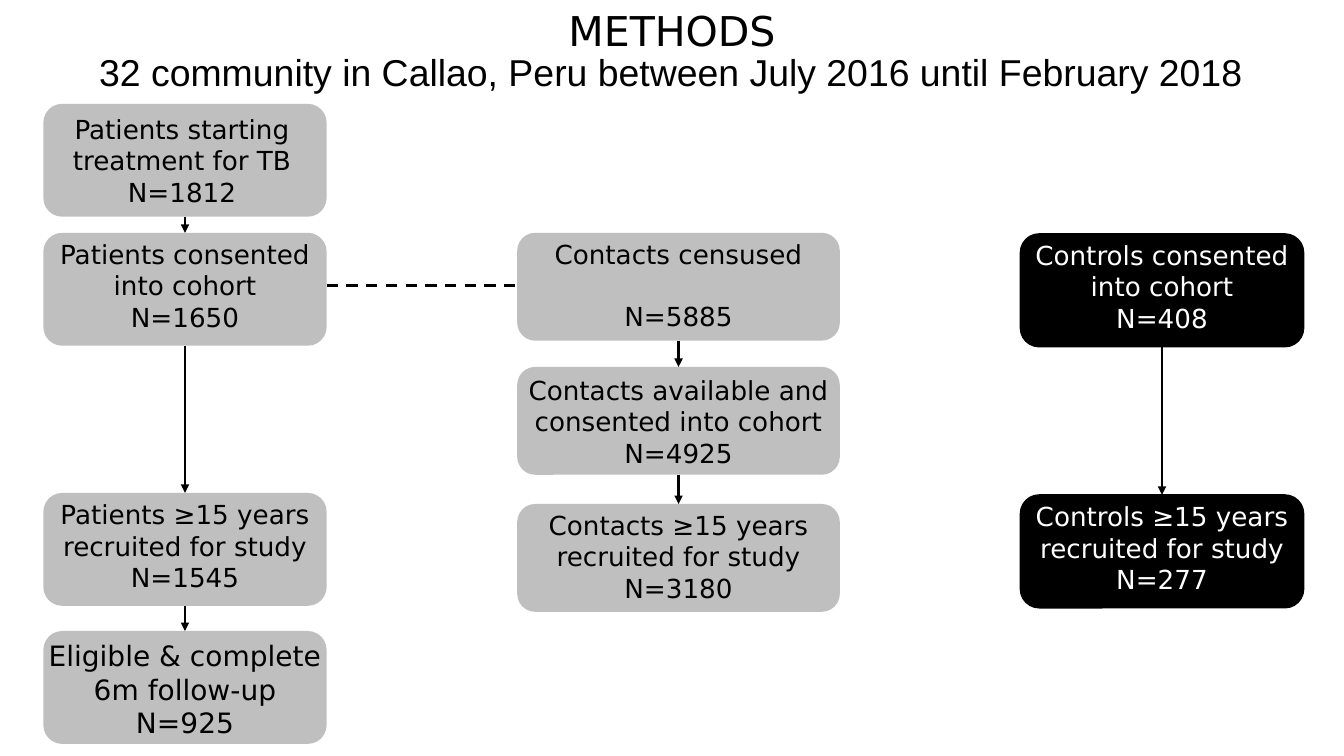
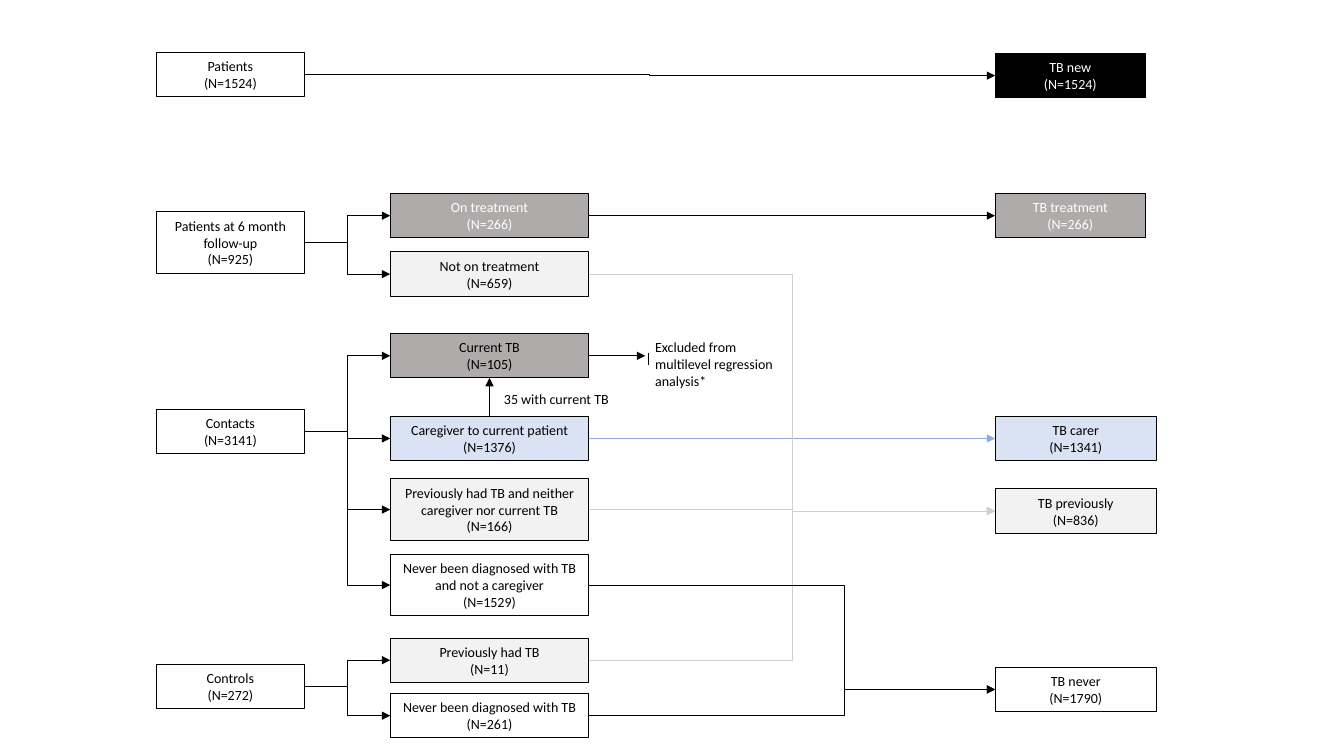
import pptx
import pptx.dml.color
import pptx.enum.dml
import pptx.enum.shapes
import pptx.enum.text
import pptx.oxml.ns
import pptx.util
from lxml import etree

Inches, Pt = pptx.util.Inches, pptx.util.Pt
SHAPE = pptx.enum.shapes.MSO_SHAPE
CONNECTOR = pptx.enum.shapes.MSO_CONNECTOR
ANCHOR = pptx.enum.text.MSO_ANCHOR
ALIGN = pptx.enum.text.PP_ALIGN
qn = pptx.oxml.ns.qn

BLACK, WHITE = "000000", "FFFFFF"
SILVER, GREY, PALE, BLUE = "BFBFBF", "AFABAB", "F2F2F2", "DAE3F3"
PALE_LINE, BLUE_LINE = "D0CECE", "8FAADC"
TOP, LEFT, BOTTOM, RIGHT = range(4)

HEADING = {"name": "DejaVu Sans", "size": Pt(29.3)}
SUBHEADING = {"name": "Arial", "size": Pt(26.7)}
COHORT = {"name": "DejaVu Sans", "size": Pt(18.7)}
COHORT_LARGE = {"name": "DejaVu Sans", "size": Pt(20)}
SMALL = {"name": "Calibri", "size": Pt(10)}
NO_MARGIN = {"margin_left": 0, "margin_right": 0, "margin_top": 0, "margin_bottom": 0}


def rgb(color):
    """Turn a hex string into a colour."""
    return pptx.dml.color.RGBColor.from_string(color)


def apply(target, values):
    """Set attributes from a dict of format values."""
    for name, value in values.items():
        setattr(target, name, value)


def write(sp, text, font, color=BLACK, align=ALIGN.CENTER, gap=0, **frame):
    """Fill a shape with one paragraph per line of text."""
    tf = sp.text_frame
    apply(tf, {"word_wrap": True, "auto_size": pptx.enum.text.MSO_AUTO_SIZE.NONE,
               "vertical_anchor": ANCHOR.TOP, **frame})
    for i, line in enumerate(text.split("\n")):
        p = tf.add_paragraph() if i else tf.paragraphs[0]
        apply(p, {"alignment": align, "space_before": Pt(gap if i else 0)})
        p.text = line
        for r in p.runs:
            apply(r.font, font)
            r.font.color.rgb = rgb(color)


def place(sp, left, top, width, height):
    """Move and size a shape in inches."""
    apply(sp, {"left": Inches(left), "top": Inches(top),
               "width": Inches(width), "height": Inches(height)})


def block(s, kind, box, fill=None, line=None, weight=0.75):
    """Add a preset shape with plain fill and outline."""
    sp = s.shapes.add_shape(kind, *map(Inches, box))
    sp.shadow.inherit = False
    if fill:
        sp.fill.solid()
        sp.fill.fore_color.rgb = rgb(fill)
    else:
        sp.fill.background()
    if line:
        sp.line.color.rgb = rgb(line)
        sp.line.width = Pt(weight)
    else:
        sp.line.fill.background()
    return sp


def connector(s, ends=(0, 0, 0, 0), kind=CONNECTOR.STRAIGHT, color=BLACK,
              weight=0.5, head=True):
    """Add a line without shadow, with an optional arrowhead."""
    c = s.shapes.add_connector(kind, *map(Inches, ends))
    c.line.color.rgb = rgb(color)
    c.line.width = Pt(weight)
    if head:
        etree.SubElement(c.line._get_or_add_ln(), qn("a:tailEnd"), type="triangle")
    etree.SubElement(c._element.spPr, qn("a:effectLst"))
    return c


def join(s, start, end, sites=(RIGHT, LEFT), bend=None, **style):
    """Connect two shapes, bending at a share of the way if asked."""
    kind = CONNECTOR.ELBOW if bend else CONNECTOR.STRAIGHT
    c = connector(s, kind=kind, **style)
    c.begin_connect(start, sites[0])
    c.end_connect(end, sites[1])
    if bend:
        av = c._element.spPr.find(qn("a:prstGeom")).find(qn("a:avLst"))
        etree.SubElement(av, qn("a:gd"), name="adj1", fmla=f"val {round(bend * 100000)}")
    return c


def note(s, box, text):
    """Add a small left-aligned label."""
    tb = s.shapes.add_textbox(*map(Inches, box))
    write(tb, text, SMALL, align=ALIGN.LEFT)


def cohort_column(s, left, top, width, height, rows, fill=SILVER, line=None, ink=BLACK):
    """Stack rounded boxes joined by arrows; each row has an offset, text and format."""
    previous = None
    for offset, text, values in rows:
        sp = block(s, SHAPE.ROUNDED_RECTANGLE, (left, top + offset, width, height),
                   fill, line, 1)
        write(sp, text, color=ink, **{"font": COHORT, **NO_MARGIN, **values})
        if previous:
            join(s, previous, sp, (BOTTOM, TOP), weight=2)
        previous = sp


def category_column(s, left, top, width, rows):
    """Stack small boxes and return them by key."""
    boxes = {}
    for key, offset, height, fill, ink, text in rows:
        sp = block(s, SHAPE.RECTANGLE, (left, top + offset, width, height), fill, BLACK)
        write(sp, text, SMALL, ink, vertical_anchor=ANCHOR.MIDDLE)
        boxes[key] = sp
    return boxes


def methods_slide(prs):
    """Build the recruitment flow of patients, contacts and controls."""
    s = prs.slides.add_slide(prs.slide_layouts[0])
    title, subtitle = s.placeholders
    place(title, 0, 0, 13.33, 0.59)
    write(title, "METHODS", HEADING)
    place(subtitle, 0, 0.44, 13.33, 0.55)
    write(subtitle, "32 community in Callao, Peru between July 2016 until February 2018",
          SUBHEADING)
    cohort_column(s, 0.43, 1.03, 2.81, 1.12, [
        (0, "Patients starting treatment for TB\nN=1812",
         {"margin_top": Inches(0.04), "margin_right": Inches(0.06)}),
        (1.28, "Patients consented into cohort\nN=1650", {}),
        (3.86, "Patients ≥15 years recruited for study\nN=1545", {}),
        (5.23, "Eligible & complete\v6m follow-up\nN=925",
         {"font": COHORT_LARGE, "word_wrap": False, "margin_top": Inches(0.02)}),
    ])
    cohort_column(s, 5.13, 2.31, 3.2, 1.07, [
        (0, "Contacts censused\nN=5885", {"gap": 21.8}),
        (1.33, "Contacts available and consented into cohort\nN=4925",
         {"margin_top": Inches(0.02)}),
        (2.69, "Contacts ≥15 years recruited for study\nN=3180", {}),
    ])
    cohort_column(s, 10.12, 2.32, 2.81, 1.12, [
        (0, "Controls consented into cohort\nN=408", {}),
        (2.59, "Controls ≥15 years recruited for study\nN=277", {}),
    ], BLACK, BLACK, WHITE)
    link = connector(s, (3.24, 2.83, 5.18, 2.83), weight=2, head=False)
    link.line.dash_style = pptx.enum.dml.MSO_LINE.DASH


def categories_slide(prs):
    """Build the flow from participants to TB categories."""
    s = prs.slides.add_slide(prs.slide_layouts[6])
    sources = category_column(s, 1.55, 0.52, 1.47, [
        ("patients", 0, 0.44, None, BLACK, "Patients\n(N=1524)"),
        ("followup", 1.58, 0.61, None, BLACK, "Patients at 6 month follow-up\n(N=925)"),
        ("contacts", 3.54, 0.44, None, BLACK, "Contacts\n(N=3141)"),
        ("controls", 6.07, 0.44, None, BLACK, "Controls\n(N=272)"),
    ])
    groups = category_column(s, 3.87, 1.92, 1.97, [
        ("treated", 0, 0.44, GREY, WHITE, "On treatment\n(N=266)"),
        ("untreated", 0.58, 0.44, PALE, BLACK, "Not on treatment\n(N=659)"),
        ("current", 1.39, 0.44, GREY, BLACK, "Current TB\n(N=105)"),
        ("caregiver", 2.21, 0.44, BLUE, BLACK, "Caregiver to current patient (N=1376)"),
        ("previous", 2.83, 0.61, PALE, BLACK,
         "Previously had TB and neither caregiver nor current TB\n(N=166)"),
        ("never", 3.58, 0.61, None, BLACK,
         "Never been diagnosed with TB and not a caregiver\n(N=1529)"),
        ("control_previous", 4.41, 0.44, PALE, BLACK, "Previously had TB\n(N=11)"),
        ("control_never", 4.96, 0.44, None, BLACK, "Never been diagnosed with TB\n(N=261)"),
    ])
    results = category_column(s, 9.87, 0.53, 1.49, [
        ("new", 0, 0.44, BLACK, WHITE, "TB new\n(N=1524)"),
        ("treatment", 1.39, 0.44, GREY, WHITE, "TB treatment\n(N=266)"),
    ])
    results.update(category_column(s, 9.87, 4.13, 1.6, [
        ("carer", 0, 0.44, BLUE, BLACK, "TB carer\n(N=1341)"),
        ("previously", 0.72, 0.44, PALE, BLACK, "TB previously\n(N=836)"),
        ("never", 2.49, 0.44, None, BLACK, "TB never\n(N=1790)"),
    ]))
    branches = {
        "followup": ("treated", "untreated"),
        "contacts": ("current", "caregiver", "previous", "never"),
        "controls": ("control_previous", "control_never"),
    }
    for source, keys in branches.items():
        for key in keys:
            join(s, sources[source], groups[key], bend=0.5)
    join(s, sources["patients"], results["new"], bend=0.5)
    for key, result, bend, color in [
        ("treated", "treatment", None, BLACK),
        ("caregiver", "carer", None, BLUE_LINE),
        ("untreated", "previously", 0.5, PALE_LINE),
        ("previous", "previously", 0.5, PALE_LINE),
        ("control_previous", "previously", 0.5, PALE_LINE),
        ("never", "never", 0.63, BLACK),
        ("control_never", "never", 0.63, BLACK),
    ]:
        join(s, groups[key], results[result], bend=bend, color=color)
    join(s, groups["caregiver"], groups["current"], (TOP, BOTTOM))
    note(s, (4.9, 3.83, 2.07, 0.27), "35 with current TB")
    exclusion = connector(s, (5.84, 3.53, 6.4, 3.53))
    exclusion.begin_connect(groups["current"], RIGHT)
    connector(s, (6.43, 3.5, 6.43, 3.62), head=False)
    note(s, (6.4, 3.31, 1.5, 0.61), "Excluded from multilevel regression analysis*")


def main():
    """Build and save the presentation."""
    prs = pptx.Presentation()
    apply(prs, {"slide_width": Inches(13.33), "slide_height": Inches(7.5)})
    methods_slide(prs)
    categories_slide(prs)
    prs.save("out.pptx")


if __name__ == "__main__":
    main()
